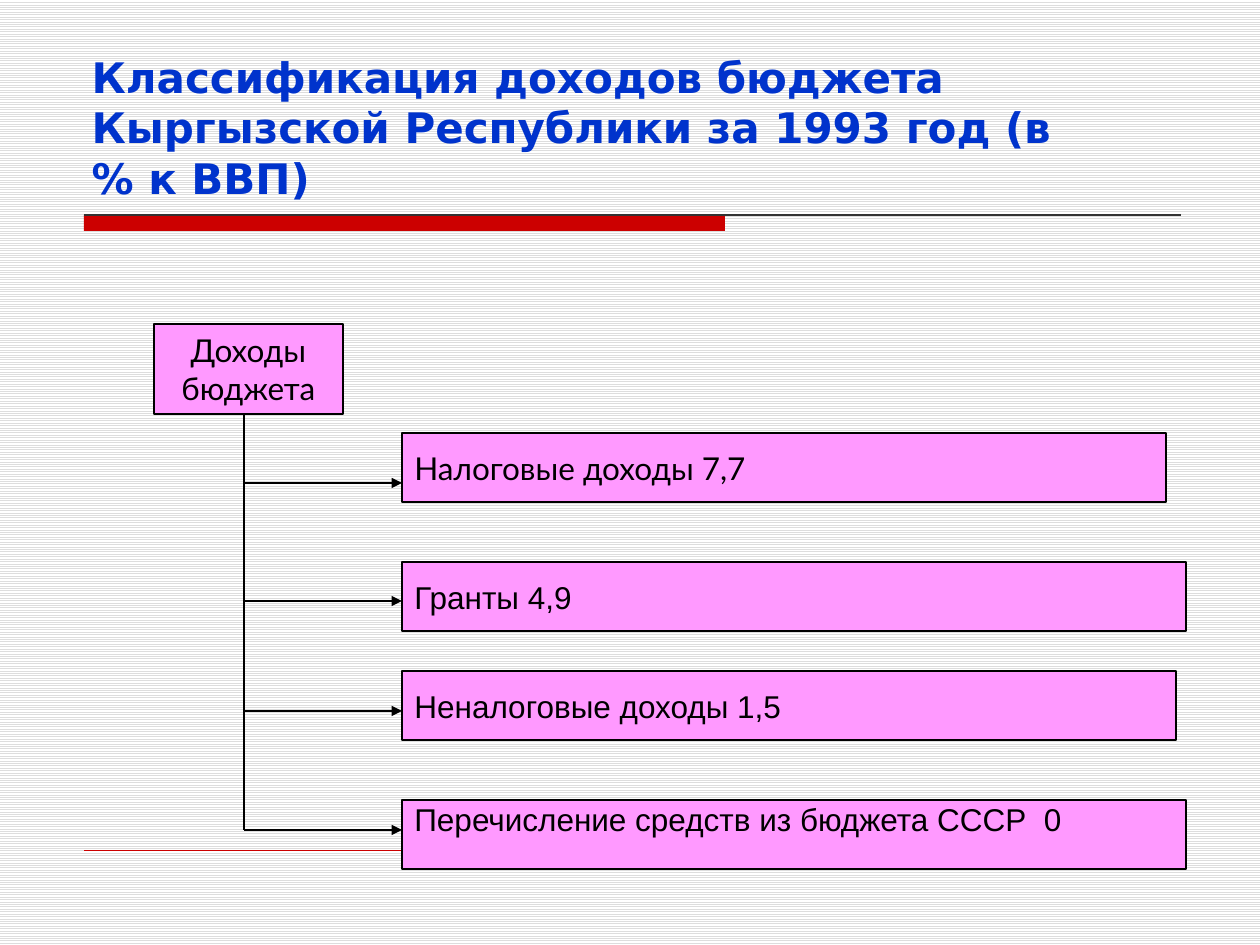
from lxml import etree
from pptx import Presentation
from pptx import util as u
from pptx.dml.color import RGBColor
from pptx.enum import dml, shapes, text
from pptx.oxml.ns import qn

PX = 914400 // 126  # EMU per px

BLUE = RGBColor(0x00, 0x33, 0xCC)
RED = RGBColor(0xCC, 0x00, 0x00)
PINK = RGBColor(0xFF, 0x99, 0xFF)
BLACK = RGBColor(0x00, 0x00, 0x00)
DARK = RGBColor(0x33, 0x33, 0x33)
STRIPE = RGBColor(0xDD, 0xDD, 0xDD)
WHITE = RGBColor(0xFF, 0xFF, 0xFF)

# Text, font, box top, box width, arrow height, anchor
INCOMES = [
    ("Налоговые доходы 7,7", "Lato", 433, 764, 483, text.MSO_ANCHOR.MIDDLE),
    ("Гранты 4,9", "Arial", 562, 784, 601, text.MSO_ANCHOR.MIDDLE),
    ("Неналоговые доходы 1,5", "Arial", 671, 774, 711, text.MSO_ANCHOR.MIDDLE),
    ("Перечисление средств из бюджета СССР  0", "Arial", 800, 784, 830, text.MSO_ANCHOR.TOP),
]


def px(*lengths):
    return [u.Emu(length * PX) for length in lengths]


def add_run(paragraph, words, font, size, color, bold=False):
    run = paragraph.add_run()
    run.text = words
    run.font.name, run.font.size, run.font.bold = font, u.Pt(size), bold
    run.font.color.rgb = color


def add_line(slide, start, end, color=BLACK, width=0.75, arrow=False):
    line = slide.shapes.add_connector(shapes.MSO_CONNECTOR.STRAIGHT, *px(*start, *end))
    line.line.color.rgb = color
    line.line.width = u.Pt(width)
    if arrow:
        etree.SubElement(line.line._get_or_add_ln(), qn("a:tailEnd"), type="triangle")
    etree.SubElement(line._element.spPr, qn("a:effectLst"))


def add_box(slide, box, lines, font, align, anchor=text.MSO_ANCHOR.MIDDLE):
    shape = slide.shapes.add_shape(shapes.MSO_SHAPE.RECTANGLE, *px(*box))
    shape.shadow.inherit = False
    shape.fill.solid()
    shape.fill.fore_color.rgb = PINK
    shape.line.color.rgb = BLACK
    shape.line.width = u.Pt(0.75)
    frame = shape.text_frame
    frame.word_wrap = True
    frame.vertical_anchor = anchor
    if anchor == text.MSO_ANCHOR.TOP:
        frame.margin_top = 0
    for index, words in enumerate(lines):
        paragraph = frame.add_paragraph() if index else frame.paragraphs[0]
        paragraph.alignment = align
        add_run(paragraph, words, font, 18, BLACK)


def add_background(slide):
    fill = slide.background.fill
    fill.patterned()
    fill.pattern = dml.MSO_PATTERN.LIGHT_HORIZONTAL
    fill.fore_color.rgb = STRIPE
    fill.back_color.rgb = WHITE


def add_rules(slide, left, top, bottom):
    # Thick bar under the title, with a thin line running on
    bar = slide.shapes.add_shape(shapes.MSO_SHAPE.RECTANGLE, *px(left, top, 641, 16))
    bar.shadow.inherit = False
    bar.fill.solid()
    bar.fill.fore_color.rgb = RED
    bar.line.fill.background()
    add_line(slide, (left, top), (left + 1097, top), DARK)
    # Footer line
    add_line(slide, (left, bottom), (left + 1092, bottom), RED, 0.25)


def add_title(slide, box, words):
    title = slide.shapes.title
    title.left, title.top, title.width, title.height = px(*box)
    frame = title.text_frame
    frame.word_wrap = True
    frame.auto_size = text.MSO_AUTO_SIZE.NONE
    frame.vertical_anchor = text.MSO_ANCHOR.BOTTOM
    paragraph = frame.paragraphs[0]
    paragraph.alignment = text.PP_ALIGN.LEFT
    add_run(paragraph, words, "DejaVu Sans", 24, BLUE, bold=True)


def add_income_tree(slide, left, top):
    # Root box and trunk
    add_box(slide, (left, top, 189, 90), ["Доходы", "бюджета"], "Lato", text.PP_ALIGN.CENTER)
    trunk, branch = left + 90, left + 248
    add_line(slide, (trunk, top + 90), (trunk, INCOMES[-1][4]))
    # One arrow and box for each kind of income
    for words, font, box_top, width, arrow_y, anchor in INCOMES:
        add_line(slide, (trunk, arrow_y), (branch, arrow_y), arrow=True)
        add_box(slide, (branch, box_top, width, 69), [words], font, text.PP_ALIGN.LEFT, anchor)


def main():
    presentation = Presentation()
    presentation.slide_width, presentation.slide_height = u.Inches(10), u.Inches(7.5)
    slide = presentation.slides.add_slide(presentation.slide_layouts[5])
    add_background(slide)
    add_rules(slide, 84, 215, 850)
    add_title(slide, (79, 106, 1041, 103),
              "Классификация доходов бюджета Кыргызской Республики за 1993 год (в % к ВВП)")
    add_income_tree(slide, 154, 324)
    presentation.save("out.pptx")


if __name__ == "__main__":
    main()
